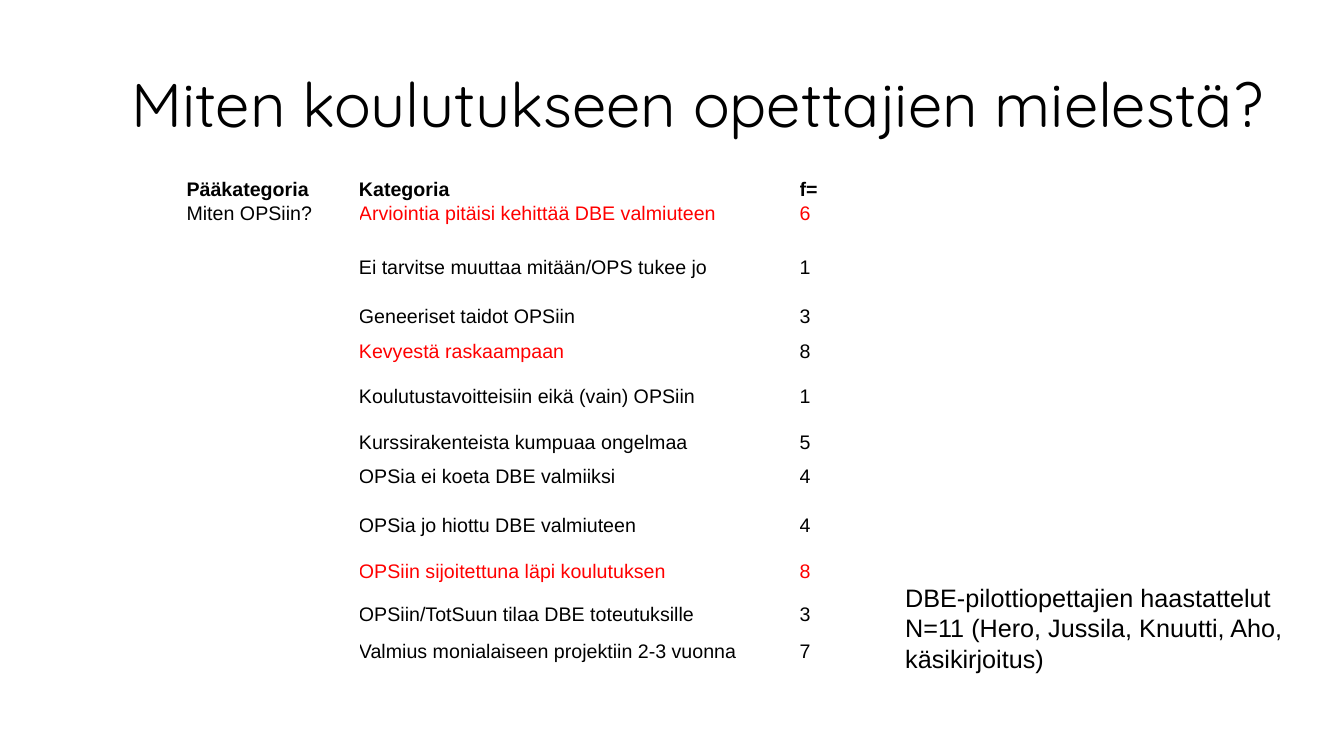
from pptx import Presentation
from pptx.dml.color import RGBColor
from pptx.enum.text import MSO_ANCHOR, MSO_AUTO_SIZE, PP_ALIGN
from pptx.util import Inches, Pt

TOP, BOTTOM = MSO_ANCHOR.TOP, MSO_ANCHOR.BOTTOM
LEFT = PP_ALIGN.LEFT
NO_FIT = MSO_AUTO_SIZE.NONE
GROW = MSO_AUTO_SIZE.SHAPE_TO_FIT_TEXT

THEME = {
    "black": RGBColor(0x00, 0x00, 0x00),
    "red": RGBColor(0xFF, 0x00, 0x00),
    "title_font": "Quicksand",
    "body_font": "Arial",
    "title": 44,
    "note": 18,
    "cell": 14,
}

# Column widths and, per row: height, cell texts, columns shown in red
COLS = [1.71, 4.37, 0.94]
ROWS = [
    (0.24, ("Pääkategoria", "Kategoria", "f="), ()),
    (0.54, ("Miten OPSiin?", "Arviointia pitäisi kehittää DBE valmiuteen", "6"), (1, 2)),
    (0.48, ("", "Ei tarvitse muuttaa mitään/OPS tukee jo", "1"), ()),
    (0.35, ("", "Geneeriset taidot OPSiin", "3"), ()),
    (0.45, ("", "Kevyestä raskaampaan", "8"), (1,)),
    (0.45, ("", "Koulutustavoitteisiin eikä (vain) OPSiin", "1"), ()),
    (0.34, ("", "Kurssirakenteista kumpuaa ongelmaa", "5"), ()),
    (0.49, ("", "OPSia ei koeta DBE valmiiksi", "4"), ()),
    (0.45, ("", "OPSia jo hiottu DBE valmiuteen", "4"), ()),
    (0.43, ("", "OPSiin sijoitettuna läpi koulutuksen", "8"), (1, 2)),
    (0.37, ("", "OPSiin/TotSuun tilaa DBE toteutuksille", "3"), ()),
    (0.24, ("", "Valmius monialaiseen projektiin 2-3 vuonna", "7"), ()),
]


def add_run(p, text, size, font="body_font", color="black", bold=False):
    r = p.add_run()
    r.text = text
    r.font.name = THEME[font]
    r.font.size = Pt(THEME[size])
    r.font.bold = bold
    r.font.color.rgb = THEME[color]


prs = Presentation()
prs.slide_width, prs.slide_height = Inches(13.33), Inches(7.5)
s = prs.slides.add_slide(prs.slide_layouts[5])

# Title
title = s.shapes.title
title.left, title.top = Inches(1.2), 0
title.width, title.height = prs.slide_width - title.left, Inches(1.45)
tf = title.text_frame
tf.word_wrap = True
tf.auto_size = NO_FIT
tf.vertical_anchor = BOTTOM
p = tf.paragraphs[0]
p.alignment = LEFT
p.line_spacing = 0.9
p.space_after = Pt(12)
add_run(p, "Miten koulutukseen opettajien mielestä?", "title", "title_font")

# Category table
frame = s.shapes.add_table(
    len(ROWS), len(COLS), Inches(1.85), Inches(1.77),
    Inches(sum(COLS)), Inches(sum(row[0] for row in ROWS)))
table = frame.table
table.first_row = table.horz_banding = False
for col, width in zip(table.columns, COLS):
    col.width = Inches(width)
for i, (height, texts, red) in enumerate(ROWS):
    table.rows[i].height = Inches(height)
    for j, text in enumerate(texts):
        cell = table.cell(i, j)
        cell.fill.background()
        cell.margin_left = cell.margin_right = cell.margin_top = 0
        cell.margin_bottom = Inches(0.02)
        cell.vertical_anchor = BOTTOM if i == 0 and j != 1 else TOP
        if text:
            add_run(cell.text_frame.paragraphs[0], text, "cell",
                    color="red" if j in red else "black", bold=i == 0)

# Source note
note = s.shapes.add_textbox(Inches(8.88), Inches(5.73), Inches(4), Inches(1.01))
tf = note.text_frame
tf.word_wrap = True
tf.auto_size = GROW
add_run(tf.paragraphs[0],
        "DBE-pilottiopettajien haastattelut N=11 (Hero, Jussila, Knuutti, Aho, käsikirjoitus)",
        "note")

prs.save("out.pptx")
